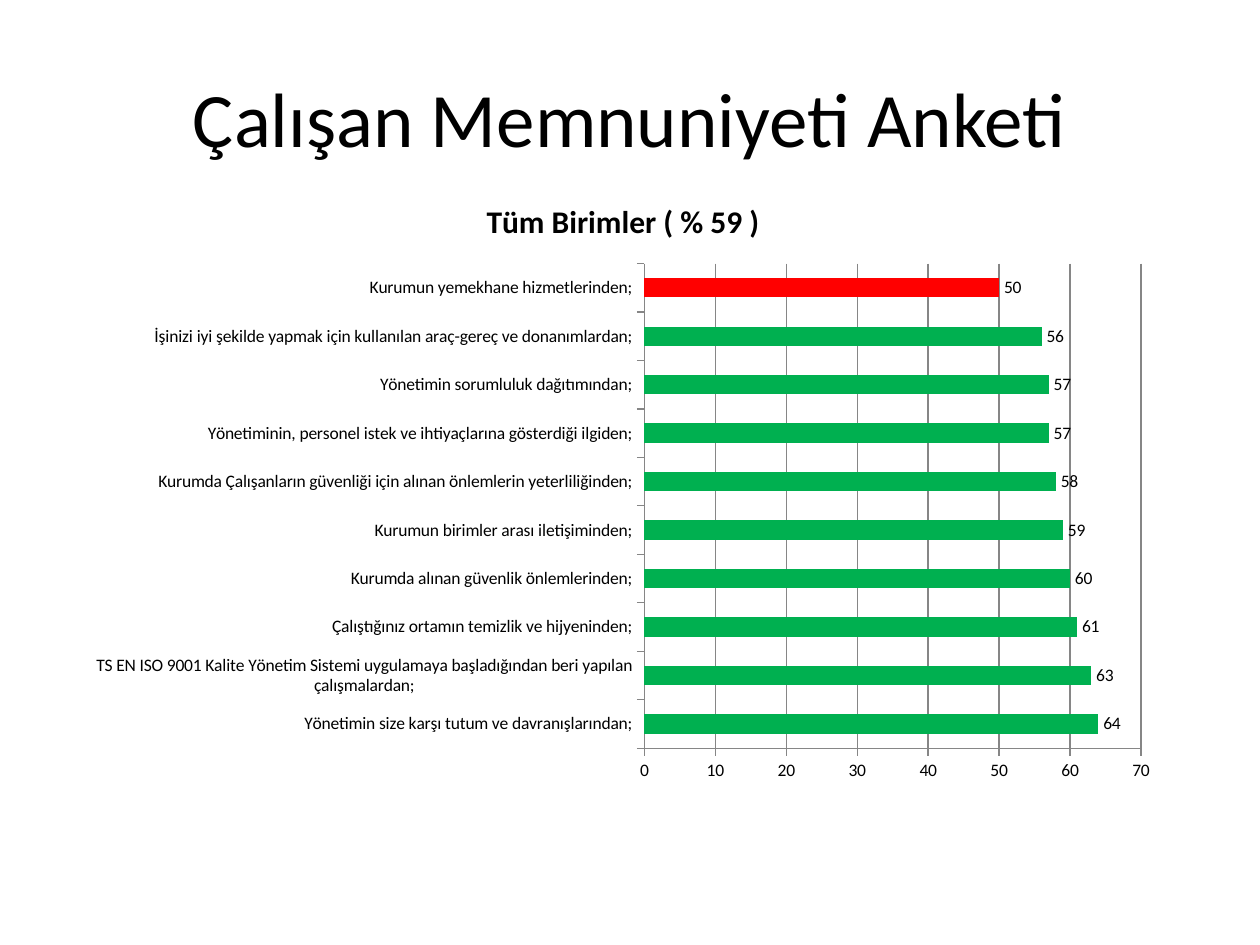
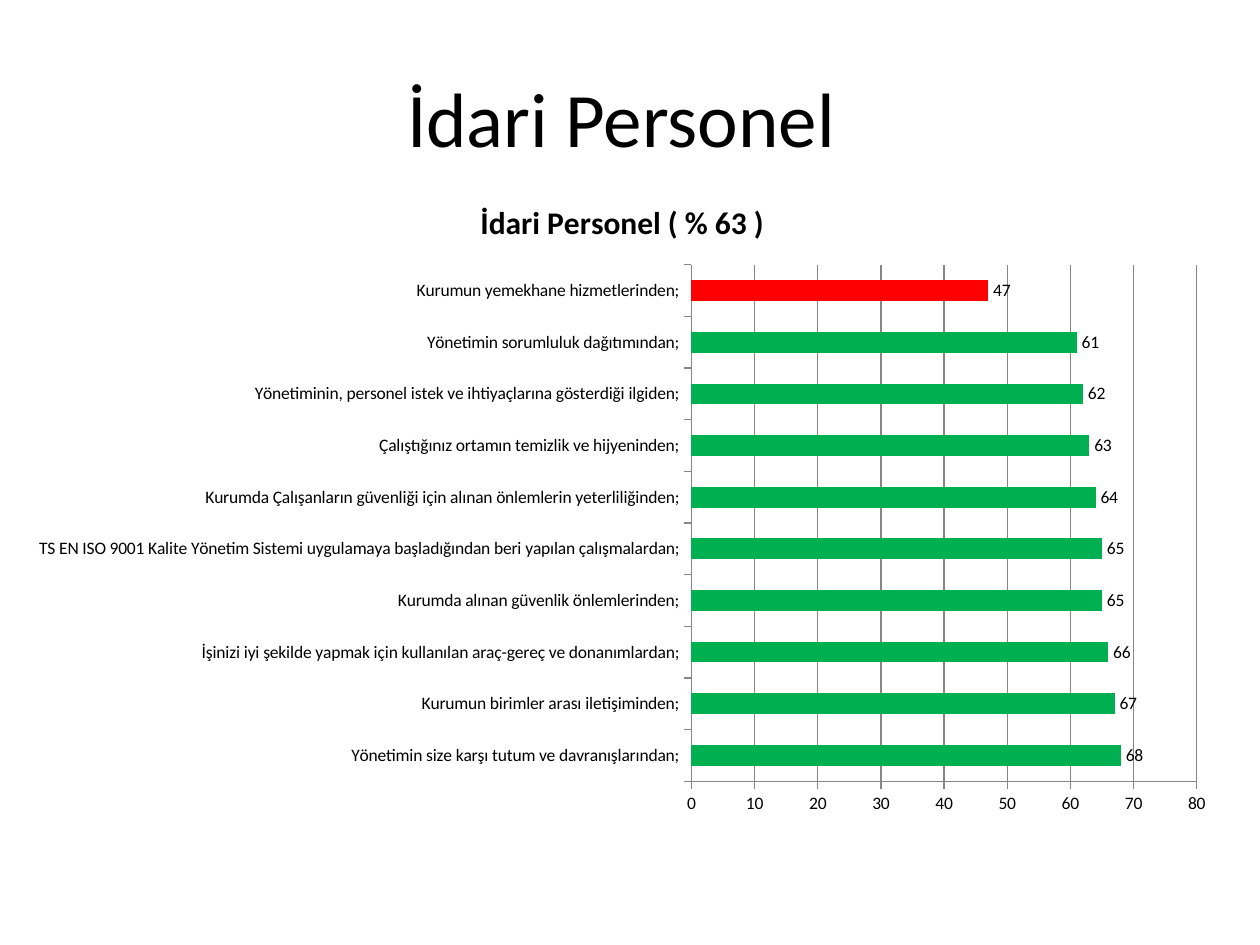
from pptx import Presentation
from pptx import util as u
from pptx.chart.data import CategoryChartData
from pptx.dml.color import RGBColor
from pptx.enum import chart as charts, text

FONT = "Calibri"
BLACK, GRAY, GREEN, RED = "000000", "868686", "00B050", "FF0000"
TITLE_ONLY = 5

# Question: (score of all units, score of administrative staff)
SCORES = {
    "Yönetimin size karşı tutum ve davranışlarından;": (64, 68),
    "Kurumda alınan güvenlik önlemlerinden;": (60, 65),
    "TS EN ISO 9001 Kalite Yönetim Sistemi uygulamaya başladığından beri "
    "yapılan çalışmalardan;": (63, 65),
    "Çalıştığınız ortamın temizlik ve hijyeninden;": (61, 63),
    "Kurumun birimler arası iletişiminden;": (59, 67),
    "Kurumda Çalışanların güvenliği için alınan önlemlerin "
    "yeterliliğinden;": (58, 64),
    "Yönetiminin, personel istek ve ihtiyaçlarına gösterdiği ilgiden;": (57, 62),
    "Yönetimin sorumluluk dağıtımından;": (57, 61),
    "İşinizi iyi şekilde yapmak için kullanılan araç-gereç ve "
    "donanımlardan;": (56, 66),
    "Kurumun yemekhane hizmetlerinden;": (50, 47),
}


def color(hex_string):
    return RGBColor.from_string(hex_string)


def style_font(font, size, bold=False):
    font.name = FONT
    font.size = u.Pt(size)
    font.bold = bold
    font.color.rgb = color(BLACK)


def style_line(line):
    line.color.rgb = color(GRAY)
    line.width = u.Pt(0.75)


def paint(bar, hex_string):
    bar.format.fill.solid()
    bar.format.fill.fore_color.rgb = color(hex_string)


def add_titled_slide(presentation, title_text):
    slide = presentation.slides.add_slide(presentation.slide_layouts[TITLE_ONLY])
    title = slide.shapes.title
    title.left, title.top = u.Cm(1.27), u.Cm(0.76)
    title.width, title.height = u.Cm(22.86), u.Cm(3.18)
    title.text_frame.text = title_text
    title.text_frame.vertical_anchor = text.MSO_ANCHOR.MIDDLE
    paragraph = title.text_frame.paragraphs[0]
    paragraph.alignment = text.PP_ALIGN.CENTER
    style_font(paragraph.font, 44)
    return slide


def style_axis(axis):
    axis.major_tick_mark = charts.XL_TICK_MARK.OUTSIDE
    axis.minor_tick_mark = charts.XL_TICK_MARK.NONE
    style_line(axis.format.line)


def add_score_chart(slide, chart_title, group, left, top, width, height):
    """Draw one group's scores, best at the bottom and the lowest in red."""
    ranking = sorted(SCORES, key=lambda question: -SCORES[question][group])
    data = CategoryChartData()
    data.categories = ranking
    data.add_series(chart_title, [SCORES[question][group] for question in ranking])
    chart = slide.shapes.add_chart(
        charts.XL_CHART_TYPE.BAR_CLUSTERED,
        u.Cm(left), u.Cm(top), u.Cm(width), u.Cm(height), data).chart

    style_font(chart.font, 10)
    chart.has_legend = False
    chart.has_title = True
    chart.chart_title.include_in_layout = False
    chart.chart_title.text_frame.text = chart_title
    style_font(chart.chart_title.text_frame.paragraphs[0].font, 18, bold=True)

    style_axis(chart.category_axis)
    style_axis(chart.value_axis)
    chart.value_axis.has_major_gridlines = True
    style_line(chart.value_axis.major_gridlines.format.line)

    plot = chart.plots[0]
    plot.gap_width = 150
    plot.vary_by_categories = False
    plot.has_data_labels = True
    plot.data_labels.show_value = True
    plot.data_labels.position = charts.XL_LABEL_POSITION.OUTSIDE_END
    style_font(plot.data_labels.font, 10)

    series = plot.series[0]
    series.invert_if_negative = False
    paint(series, GREEN)
    paint(series.points[len(ranking) - 1], RED)


def main():
    presentation = Presentation()
    presentation.slide_width, presentation.slide_height = u.Cm(25.4), u.Cm(19.05)

    slide = add_titled_slide(presentation, "Çalışan Memnuniyeti Anketi")
    add_score_chart(slide, "Tüm Birimler ( % 59 )", 0, 1.5, 3.53, 22.12, 12.45)

    slide = add_titled_slide(presentation, "İdari Personel ")
    add_score_chart(slide, "İdari Personel ( % 63 )", 1, 0.3, 3.53, 24.49, 13.13)

    presentation.save("out.pptx")


if __name__ == "__main__":
    main()
